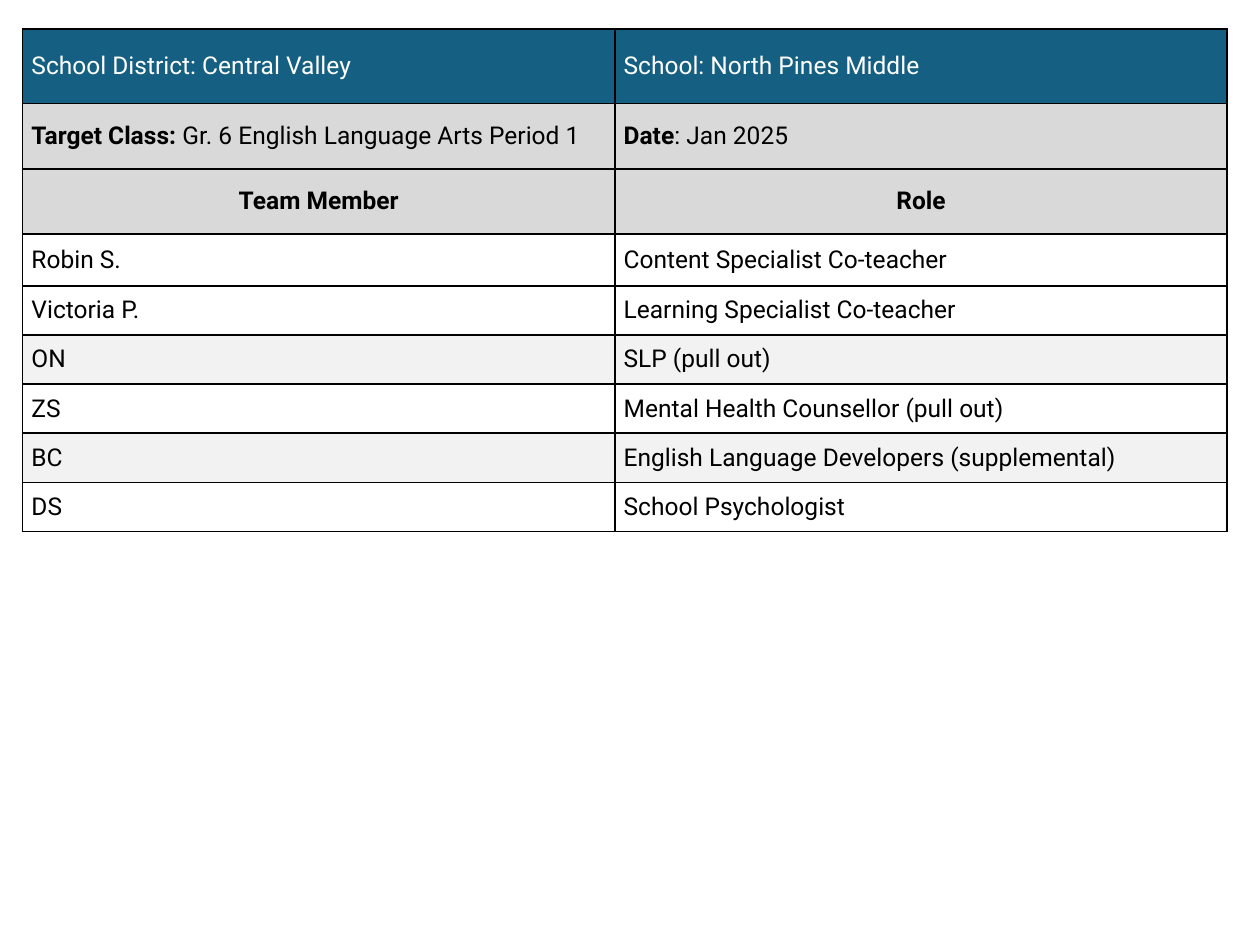
from dataclasses import dataclass

from lxml.etree import SubElement
from pptx import Presentation
from pptx.dml.color import RGBColor
from pptx.enum.text import MSO_ANCHOR, PP_ALIGN
from pptx.oxml import parse_xml
from pptx.oxml.ns import nsdecls
from pptx.table import _Cell as Cell
from pptx.util import Inches, Pt


@dataclass(frozen=True)
class Theme:
    font: str = "Roboto"
    text_size: float = 14
    border_width: float = 1
    border: str = "000000"
    ink: str = "000000"
    white: str = "FFFFFF"
    banner: str = "156082"
    heading: str = "D9D9D9"
    band: str = "F2F2F2"


@dataclass(frozen=True)
class Entry:
    plain: str = ""
    bold: str = ""


@dataclass(frozen=True)
class TeamRow:
    member: Entry
    role: Entry
    fill: str
    height: float = 0.39
    ink: str = Theme.ink
    alignment: PP_ALIGN = PP_ALIGN.LEFT


THEME = Theme()
SLIDE_WIDTH, SLIDE_HEIGHT = 10, 7.5
TABLE_LEFT, TABLE_TOP = 0.18, 0.23
COLUMN_WIDTHS = (4.7, 4.86)
MARGIN_X, MARGIN_Y = 0.07, 0.04

ROWS = (
    TeamRow(Entry("School District: Central Valley"), Entry("School: North Pines Middle"),
            THEME.banner, 0.59, THEME.white),
    TeamRow(Entry("Gr. 6 English Language Arts Period 1", "Target Class: "),
            Entry(": Jan 2025", "Date"), THEME.heading, 0.52),
    TeamRow(Entry(bold="Team Member"), Entry(bold="Role"), THEME.heading, 0.52,
            alignment=PP_ALIGN.CENTER),
    TeamRow(Entry("Robin S."), Entry("Content Specialist Co-teacher"), THEME.white, 0.41),
    TeamRow(Entry("Victoria P."), Entry("Learning Specialist Co-teacher"), THEME.white),
    TeamRow(Entry("ON"), Entry("SLP (pull out)"), THEME.band),
    TeamRow(Entry("ZS"), Entry("Mental Health Counsellor (pull out)"), THEME.white),
    TeamRow(Entry("BC"), Entry("English Language Developers (supplemental)"), THEME.band),
    TeamRow(Entry("DS"), Entry("School Psychologist"), THEME.white),
)


def set_borders(cell: Cell) -> None:
    properties = cell._tc.get_or_add_tcPr()
    for position, side in enumerate(("lnL", "lnR", "lnT", "lnB")):
        line = parse_xml(
            f'<a:{side} {nsdecls("a")} w="{Pt(THEME.border_width)}">'
            f'<a:solidFill><a:srgbClr val="{THEME.border}"/></a:solidFill></a:{side}>'
        )
        SubElement(line, f"{{{line.nsmap['a']}}}prstDash").set("val", "solid")
        properties.insert(position, line)


def write_entry(cell: Cell, entry: Entry, row: TeamRow) -> None:
    paragraph = cell.text_frame.paragraphs[0]
    paragraph.alignment = row.alignment
    for text, bold in ((entry.bold, True), (entry.plain, False)):
        if text:
            run = paragraph.add_run()
            run.text = text
            run.font.name = THEME.font
            run.font.size = Pt(THEME.text_size)
            run.font.bold = bold
            run.font.color.rgb = RGBColor.from_string(row.ink)


def draw_cell(cell: Cell, entry: Entry, row: TeamRow) -> None:
    cell.margin_left = cell.margin_right = Inches(MARGIN_X)
    cell.margin_top = cell.margin_bottom = Inches(MARGIN_Y)
    cell.vertical_anchor = MSO_ANCHOR.MIDDLE
    cell.fill.solid()
    cell.fill.fore_color.rgb = RGBColor.from_string(row.fill)
    set_borders(cell)
    write_entry(cell, entry, row)


def main() -> None:
    presentation = Presentation()
    presentation.slide_width = Inches(SLIDE_WIDTH)
    presentation.slide_height = Inches(SLIDE_HEIGHT)
    slide = presentation.slides.add_slide(presentation.slide_layouts[6])
    table = slide.shapes.add_table(
        len(ROWS), len(COLUMN_WIDTHS), Inches(TABLE_LEFT), Inches(TABLE_TOP),
        Inches(sum(COLUMN_WIDTHS)), Inches(sum(row.height for row in ROWS)),
    ).table
    table.horz_banding = False
    for column, width in zip(table.columns, COLUMN_WIDTHS):
        column.width = Inches(width)
    for table_row, row in zip(table.rows, ROWS):
        table_row.height = Inches(row.height)
        for cell, entry in zip(table_row.cells, (row.member, row.role)):
            draw_cell(cell, entry, row)
    presentation.save("out.pptx")


if __name__ == "__main__":
    main()
